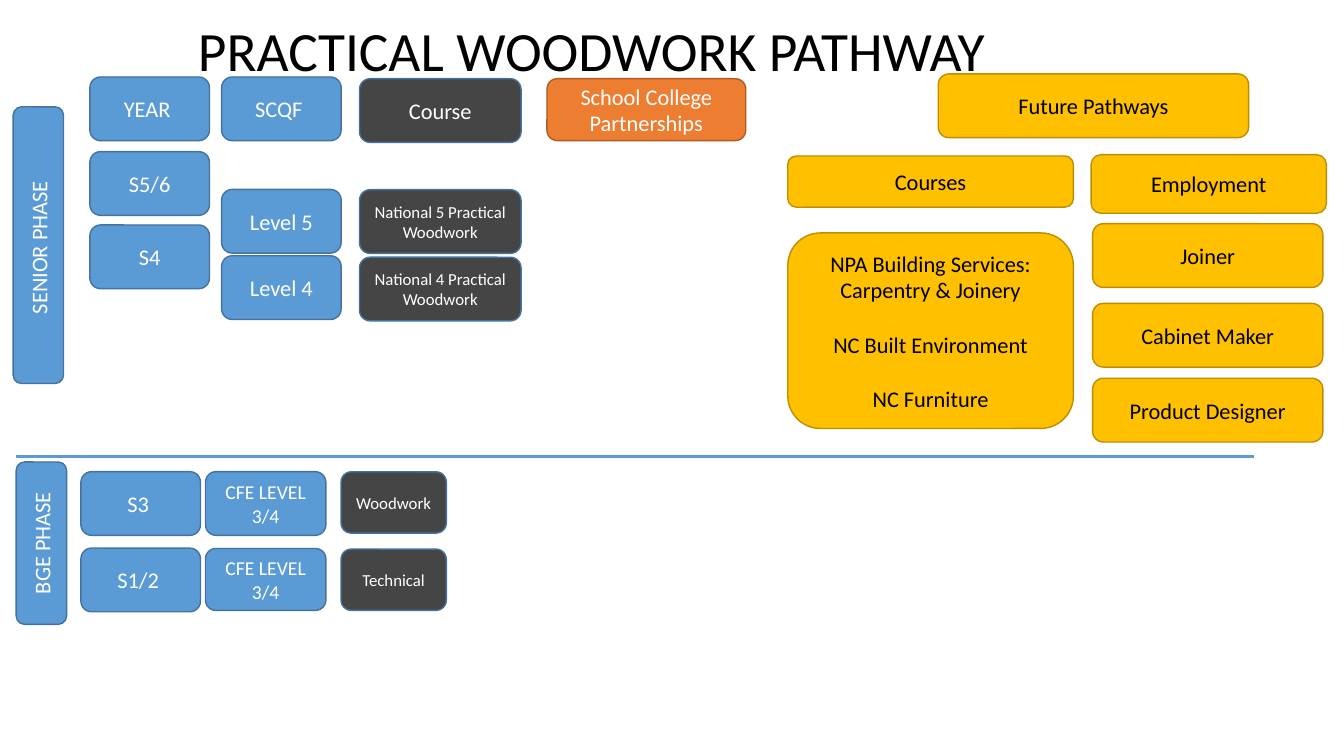
from pptx import Presentation
from pptx.dml.color import RGBColor
from pptx.enum.shapes import MSO_CONNECTOR, MSO_SHAPE
from pptx.enum.text import MSO_ANCHOR, PP_ALIGN
from pptx.oxml.ns import qn
from pptx.util import Pt
from lxml.etree import SubElement

BLACK = RGBColor(0x00, 0x00, 0x00)
WHITE = RGBColor(0xFF, 0xFF, 0xFF)
BLUE = RGBColor(0x5B, 0x9B, 0xD5)
BLUE_EDGE = RGBColor(0x43, 0x73, 0x9E)
GREY = RGBColor(0x45, 0x45, 0x45)
ORANGE = RGBColor(0xED, 0x7D, 0x31)
ORANGE_EDGE = RGBColor(0xAF, 0x5C, 0x24)
GOLD = RGBColor(0xFF, 0xC0, 0x00)
GOLD_EDGE = RGBColor(0xBD, 0x8E, 0x00)

# Content
TITLE = "PRACTICAL WOODWORK PATHWAY"
COURSES = ["NPA Building Services: Carpentry & Joinery",
           "NC Built Environment", "NC Furniture"]

# Box styles: fill, edge and text colour
STYLES = {
    "stage": (BLUE, BLUE_EDGE, WHITE),
    "course": (GREY, BLUE_EDGE, WHITE),
    "college": (ORANGE, ORANGE_EDGE, WHITE),
    "future": (GOLD, GOLD_EDGE, BLACK),
}

# Column groups: style, left, width, text size, then (text, top, height) boxes
ROW = 45.5
COLUMNS = [
    ("stage", 64.2, 85.4, 16, [("YEAR ", 55, ROW), ("S5/6", 108.3, ROW),
                               ("S4", 160.7, ROW)]),
    ("stage", 158.3, 85.4, 16, [("SCQF ", 55, ROW), ("Level 5", 135.3, ROW),
                                ("Level 4", 182.7, ROW)]),
    ("course", 256.8, 115.4, 16, [("Course", 56.2, ROW)]),
    ("course", 256.8, 115.4, 12, [("National 5 Practical Woodwork", 135.5, ROW),
                                  ("National 4 Practical Woodwork", 183.7, ROW)]),
    ("college", 390.7, 142, 16, [("School College Partnerships", 56.2, 44.2)]),
    ("future", 670.2, 221.7, 16, [("Future Pathways", 52.8, ROW)]),
    ("future", 562.7, 204, 16, [("Courses", 111.4, 36.6),
                                (COURSES, 166.4, 139.7)]),
    ("future", 779.4, 168, 16, [("Employment", 110.5, 41.8)]),
    ("future", 780.5, 164.4, 16, [("Joiner", 159.8, ROW),
                                  ("Cabinet Maker", 216.7, ROW),
                                  ("Product Designer", 270.2, ROW)]),
    ("stage", 57.8, 85.4, 16, [("S3 ", 336.9, ROW), ("S1/2 ", 391.5, ROW)]),
    ("stage", 146.8, 86, 14, [("CFE LEVEL 3/4", 336.9, ROW),
                              ("CFE LEVEL 3/4", 391.8, 44.2)]),
    ("course", 243.6, 75.2, 12, [("Woodwork", 337, 43.8),
                                 ("Technical", 392.2, 43.8)]),
]
# Phase bars: text, left, top, height
PHASES = [("SENIOR PHASE ", 9.4, 76.3, 197.6), ("BGE PHASE", 11.6, 330, 116)]
PHASE_WIDTH = 36
DIVIDER = (11.6, 326.1, 895.6, 326.1)


def write_paragraphs(frame, texts, gap, font_values, **paragraph_values):
    for index, text in enumerate(texts):
        paragraph = frame.add_paragraph() if index else frame.paragraphs[0]
        paragraph.text = text
        paragraph.alignment = PP_ALIGN.CENTER
        if index:
            paragraph.space_before = gap
        for name, value in paragraph_values.items():
            setattr(paragraph, name, value)
        font = paragraph.runs[0].font
        for name, value in font_values.items():
            if name == "color":
                font.color.rgb = value
            else:
                setattr(font, name, value)


def add_box(slide, style, text, left, top, width, height, size):
    fill, edge, text_color = STYLES[style]
    shape = slide.shapes.add_shape(MSO_SHAPE.ROUNDED_RECTANGLE,
                                   Pt(left), Pt(top), Pt(width), Pt(height))
    shape.shadow.inherit = False
    shape.fill.solid()
    shape.fill.fore_color.rgb = fill
    shape.line.color.rgb = edge
    shape.line.width = Pt(1)
    frame = shape.text_frame
    frame.word_wrap = True
    frame.vertical_anchor = MSO_ANCHOR.MIDDLE
    texts = text if isinstance(text, list) else [text]
    write_paragraphs(frame, texts, Pt(19.5),
                     {"name": "Calibri", "size": Pt(size), "color": text_color})
    return shape


presentation = Presentation()
presentation.slide_width, presentation.slide_height = Pt(960), Pt(540)
slide = presentation.slides.add_slide(presentation.slide_layouts[5])

# Title
title = slide.shapes.title
title.left, title.top, title.width, title.height = Pt(110), Pt(9.4), Pt(625), Pt(57.6)
title.text_frame.vertical_anchor = MSO_ANCHOR.MIDDLE
write_paragraphs(title.text_frame, [TITLE], None,
                 {"name": "Calibri", "size": Pt(39.6), "color": BLACK},
                 line_spacing=0.9)

# Pathway boxes
for style, left, width, size, boxes in COLUMNS:
    for text, top, height in boxes:
        add_box(slide, style, text, left, top, width, height, size)

# Phase bars with text reading upwards
for text, left, top, height in PHASES:
    bar = add_box(slide, "stage", text, left, top, PHASE_WIDTH, height, 16)
    bar.text_frame._txBody.bodyPr.set("vert", "vert270")

# Divider between the phases
divider = slide.shapes.add_connector(MSO_CONNECTOR.STRAIGHT, *map(Pt, DIVIDER))
divider.line.color.rgb = BLUE
divider.line.width = Pt(2.25)
SubElement(divider._element.spPr, qn("a:effectLst"))

presentation.save("out.pptx")
